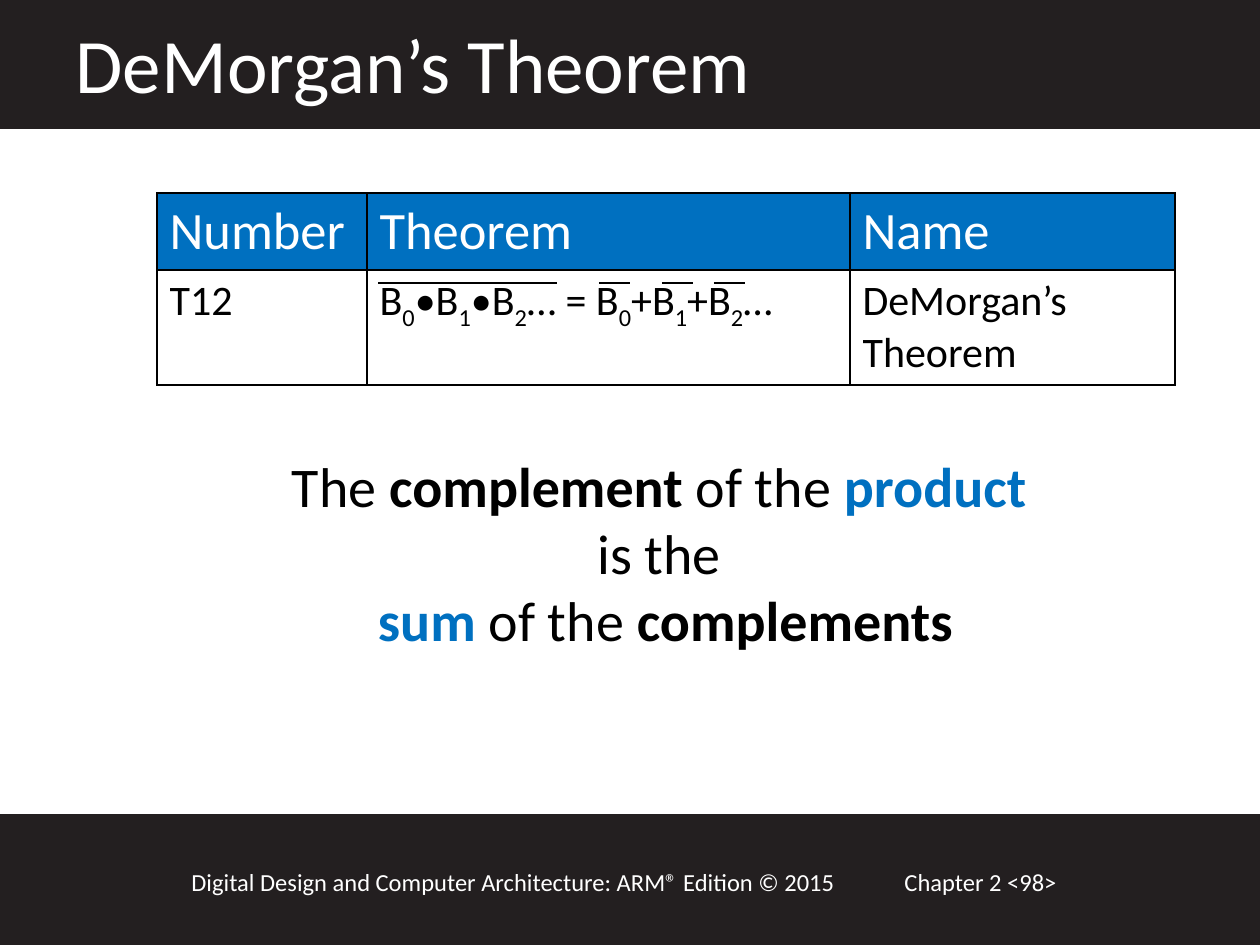
from dataclasses import dataclass

from lxml import etree
from pptx import Presentation
from pptx import util as u
from pptx.dml.color import RGBColor as Rgb
from pptx.enum import shapes, text
from pptx.oxml.ns import qn


@dataclass(frozen=True)
class Theme:
    face: str = "Calibri"
    dark: str = "231F20"
    blue: str = "0070C0"
    black: str = "000000"
    white: str = "FFFFFF"
    title: int = 44
    body: int = 32
    head: int = 30
    cell: int = 24
    foot: int = 14


T = Theme()
SCALE = 914400 / 126


def px(n):
    return u.Emu(round(n * SCALE))


def place(shape, box):
    for key, n in zip(("left", "top", "width", "height"), box):
        setattr(shape, key, px(n))


def add_run(para, words, size, color, bold=False, sub=False):
    run = para.add_run()
    run.text = words
    form = {"name": T.face, "size": u.Pt(size), "bold": bold}
    for key, val in form.items():
        setattr(run.font, key, val)
    run.font.color.rgb = Rgb.from_string(color)
    if sub:
        run._r.get_or_add_rPr().set("baseline", "-25000")


def set_frame(frame, anchor=text.MSO_ANCHOR.TOP):
    form = {"word_wrap": True, "auto_size": text.MSO_AUTO_SIZE.NONE,
            "vertical_anchor": anchor}
    for key, val in form.items():
        setattr(frame, key, val)


def add_bar(slide, box):
    bar = slide.shapes.add_shape(shapes.MSO_SHAPE.RECTANGLE, *map(px, box))
    bar.shadow.inherit = False
    bar.fill.solid()
    for fill in (bar.fill, bar.line.fill):
        fill.solid()
        fill.fore_color.rgb = Rgb.from_string(T.dark)
    bar.line.width = u.Pt(2)


def add_note(slide, words, box):
    note = slide.shapes.add_textbox(*map(px, box))
    set_frame(note.text_frame)
    add_run(note.text_frame.paragraphs[0], words, T.foot, T.white)


def set_title(slide, words, box):
    title = slide.shapes.title
    place(title, box)
    set_frame(title.text_frame, text.MSO_ANCHOR.MIDDLE)
    para = title.text_frame.paragraphs[0]
    para.alignment = text.PP_ALIGN.LEFT
    add_run(para, words, T.title, T.white)


def set_body(slide, lines, box):
    body = slide.placeholders[1]
    place(body, box)
    frame = body.text_frame
    set_frame(frame)
    for i, line in enumerate(lines):
        para = frame.add_paragraph() if i else frame.paragraphs[0]
        props = para._p.get_or_add_pPr()
        props.set("marL", "0")
        props.set("indent", "0")
        etree.SubElement(props, qn("a:buNone"))
        para.alignment = text.PP_ALIGN.CENTER
        para.space_before = u.Pt(0)
        for words, color, bold in line:
            add_run(para, words, T.body, color, bold)


def add_edges(cell):
    props = cell._tc.get_or_add_tcPr()
    for i, side in enumerate(("lnL", "lnR", "lnT", "lnB")):
        edge = etree.Element(qn(f"a:{side}"), w=str(u.Pt(1)))
        fill = etree.SubElement(edge, qn("a:solidFill"))
        etree.SubElement(fill, qn("a:srgbClr"), val=T.black)
        props.insert(i, edge)


def add_grid(slide, rows, box, cols, highs):
    grid = slide.shapes.add_table(len(rows), len(cols), *map(px, box)).table
    grid.first_row = grid.horz_banding = False
    for col, wide in zip(grid.columns, cols):
        col.width = px(wide)
    for row, high in zip(grid.rows, highs):
        row.height = px(high)
    looks = ((T.head, T.white, T.blue), (T.cell, T.black, T.white))
    for row, vals, (size, color, fill) in zip(grid.rows, rows, looks):
        for cell, parts in zip(row.cells, vals):
            cell.fill.solid()
            cell.fill.fore_color.rgb = Rgb.from_string(fill)
            add_edges(cell)
            for i, words in enumerate(parts):
                add_run(cell.text_frame.paragraphs[0], words, size, color,
                        sub=i % 2 == 1)


def add_over(slide, left, right, top):
    line = slide.shapes.add_connector(
        shapes.MSO_CONNECTOR.STRAIGHT, *map(px, (left, top, right, top)))
    line.line.width = u.Pt(0.75)
    line.line.color.rgb = Rgb.from_string(T.black)
    etree.SubElement(line._element.spPr, qn("a:effectLst"))


def main():
    deck = Presentation()
    deck.slide_width, deck.slide_height = px(1260), px(945)
    slide = deck.slides.add_slide(deck.slide_layouts[1])
    holders = list(slide.placeholders)

    for box in ((0, 816, 1260, 129), (0, 0, 1260, 127)):
        add_bar(slide, box)
    add_note(slide, "Chapter 2 <98>", (892, 861, 273, 43))
    add_note(slide, "Digital Design and Computer Architecture: ARM® Edition © 2015",
             (179, 861, 725, 43))

    for holder in holders:
        slide.shapes._spTree.append(holder._element)
    set_title(slide, "DeMorgan’s Theorem", (63, 10, 1092, 106))
    set_body(slide, (
        (("The ", T.black, False), ("complement ", T.black, True),
         ("of the ", T.black, False), ("product ", T.blue, True)),
        (("is the ", T.black, False),),
        (("sum ", T.blue, True), ("of the ", T.black, False),
         ("complements", T.black, True)),
    ), (157, 445, 1017, 217))

    law = ("B", "0", "•B", "1", "•B", "2", "… = B", "0", "+B", "1", "+B", "2", "…")
    add_grid(slide, (
        (("Number",), ("Theorem",), ("Name",)),
        (("T12",), law, ("DeMorgan’s Theorem",)),
    ), (157, 193, 1018, 189), (210, 483, 325), (76, 113))
    for left, right in ((378, 557), (599, 630), (662, 693), (714, 745)):
        add_over(slide, left, right, 283)

    deck.save("out.pptx")


if __name__ == "__main__":
    main()
